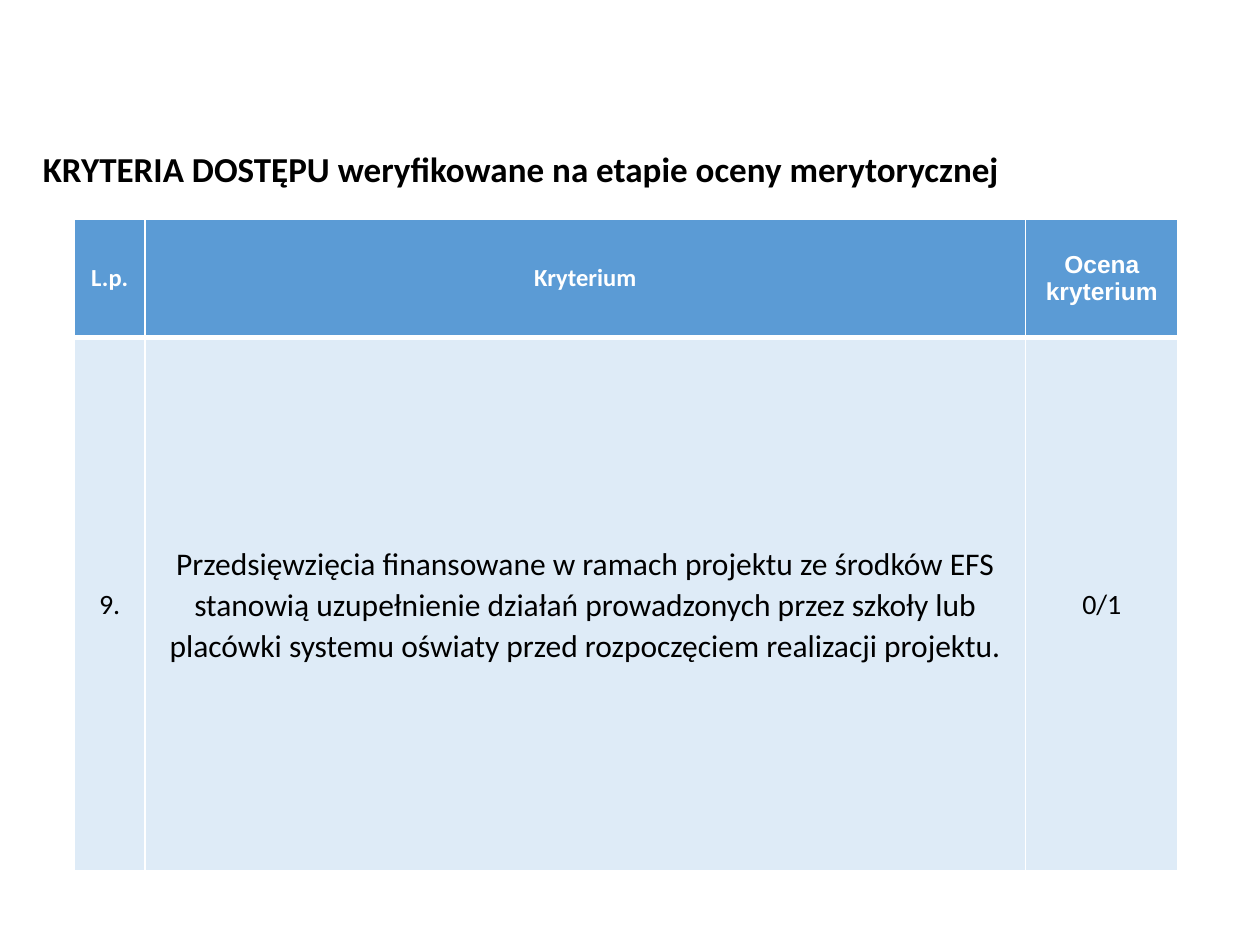
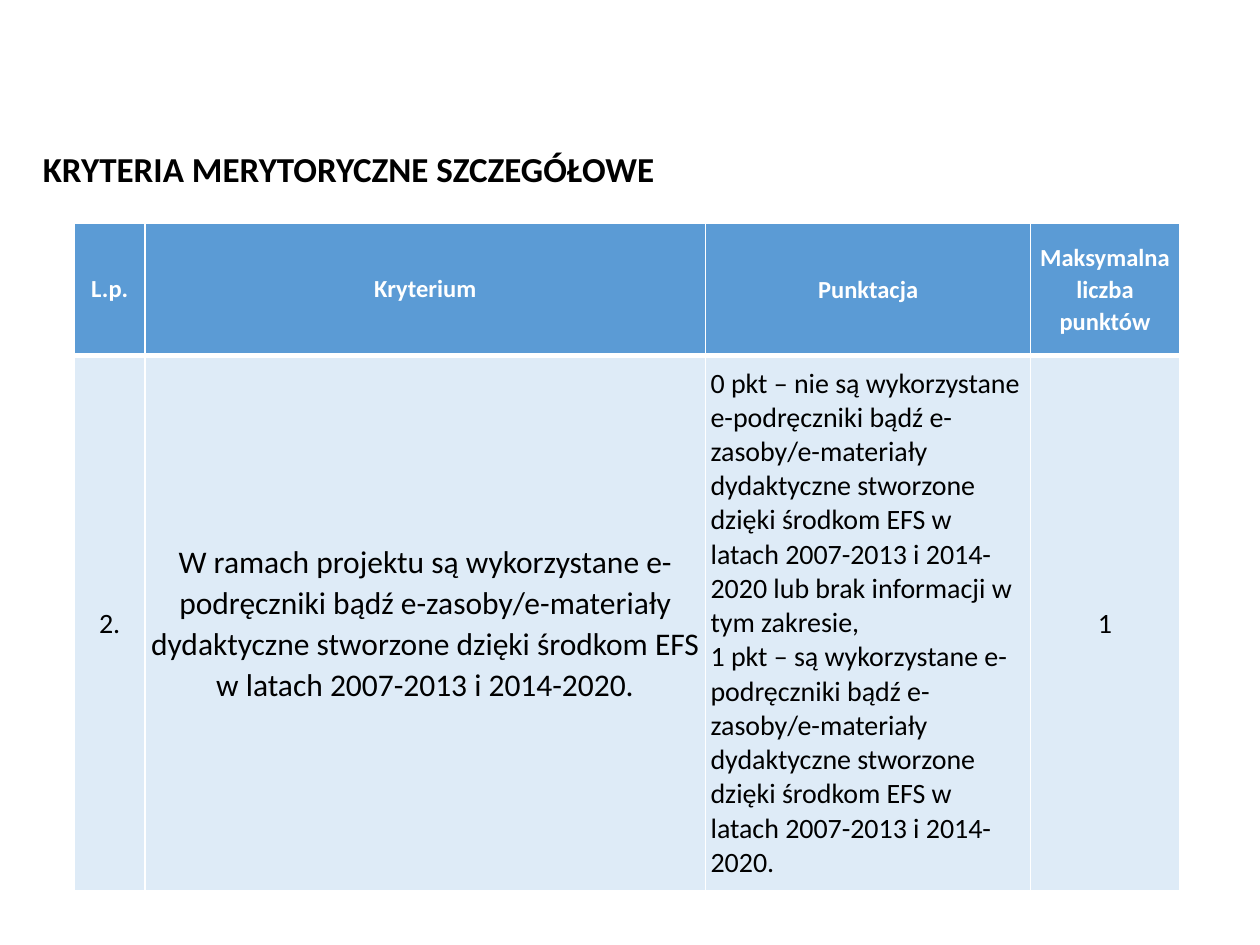
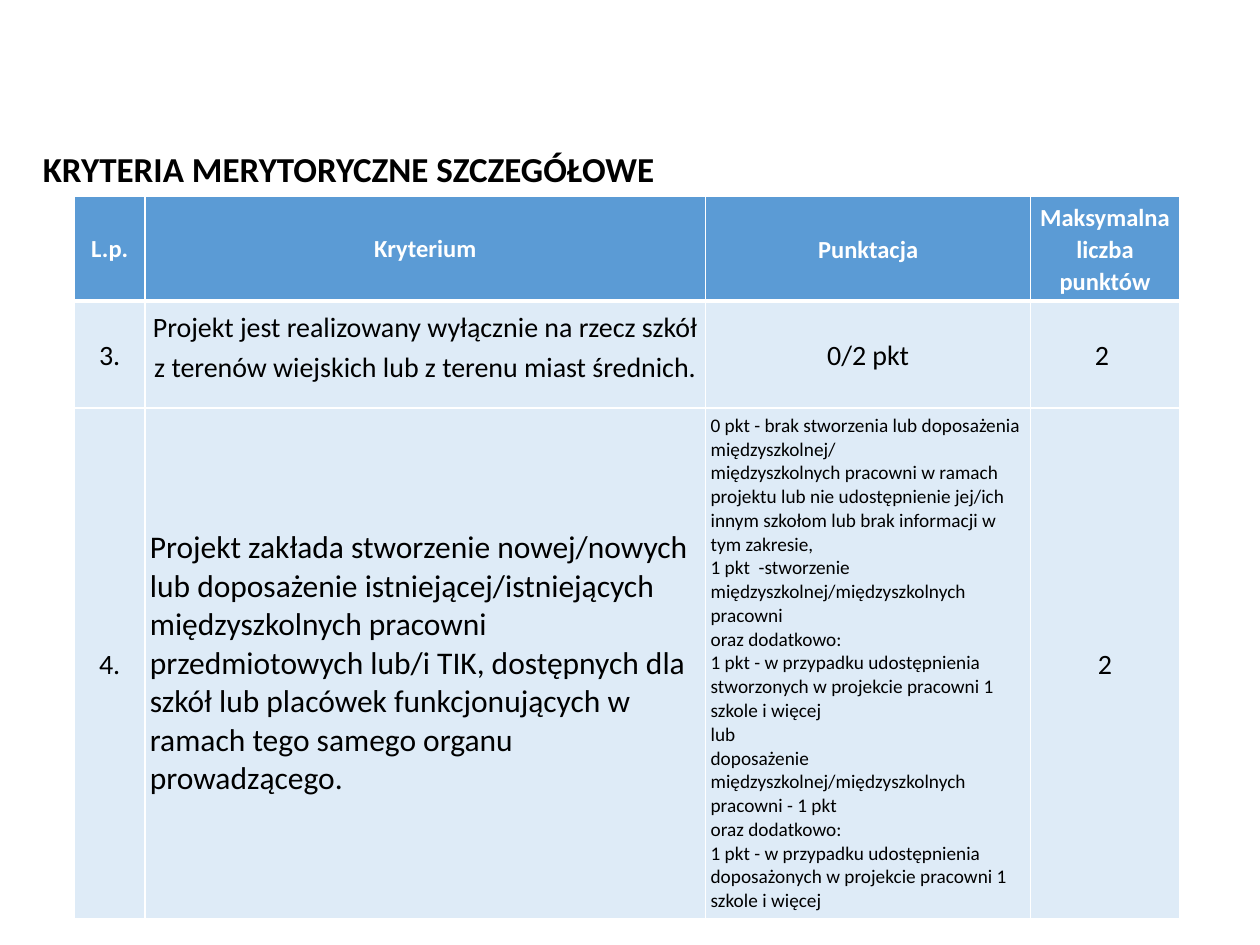
import pptx
import pptx.dml.color
import pptx.enum.text
import pptx.oxml
import pptx.oxml.ns
import pptx.util
from pptx.util import Inches

COLORS = {"header": "5B9BD5", "body": "DEEBF7", "border": "FFFFFF",
          "header_text": "FFFFFF", "text": "000000"}
ALIGN = pptx.enum.text.PP_ALIGN
ANCHOR = pptx.enum.text.MSO_ANCHOR
MARGINS = ("margin_left", "margin_top", "margin_right", "margin_bottom")

TIGHT = {"margin": 0.04}
SPACED = {**TIGHT, "spacing": 1.07}
LEFT = {**TIGHT, "align": ALIGN.LEFT}

TABLE_LEFT = 0.59
ACCESS_COLS = (0.56, 6.99, 1.21)
DETAIL_COLS = (0.56, 4.45, 2.58, 1.18)
DETAIL_TITLE = "KRYTERIA MERYTORYCZNE SZCZEGÓŁOWE"
DETAIL_HEADER = [
    ("L.p.", {}),
    ("Kryterium", {}),
    ("Punktacja", SPACED),
    ("Maksymalna liczba punktów", SPACED),
]


class Deck:
    header = {"size": 14, "bold": True, "color": "header_text", "fill": "header"}
    body = {"size": 16, "bold": False, "color": "text", "fill": "body"}
    base = {"name": "Calibri", "align": ALIGN.CENTER, "anchor": ANCHOR.MIDDLE,
            "margin": None, "spacing": None}

    def __init__(self):
        self.prs = pptx.Presentation()
        self.prs.slide_width = Inches(10)
        self.prs.slide_height = Inches(7.5)
        self.s = None

    def slide(self, title):
        self.s = self.prs.slides.add_slide(self.prs.slide_layouts[5])
        sp = self.s.shapes.title
        sp.left, sp.top, sp.width, sp.height = map(Inches, (0.24, 1.12, 9.11, 0.44))
        tf = sp.text_frame
        tf.word_wrap = True
        tf.auto_size = pptx.enum.text.MSO_AUTO_SIZE.SHAPE_TO_FIT_TEXT
        tf.vertical_anchor = ANCHOR.MIDDLE
        style = {**self.base, "size": 20, "bold": True, "color": "text",
                 "align": ALIGN.LEFT}
        self.text(tf, title, style)

    def text(self, tf, text, style):
        tf.text = text
        for p in tf.paragraphs:
            p.alignment = style["align"]
            if style["spacing"]:
                p.line_spacing = style["spacing"]
            for r in p.runs:
                values = {"name": style["name"], "bold": style["bold"],
                          "size": pptx.util.Pt(style["size"])}
                for key, value in values.items():
                    setattr(r.font, key, value)
                r.font.color.rgb = self.rgb(style["color"])

    def rgb(self, name):
        return pptx.dml.color.RGBColor.from_string(COLORS[name])

    def borders(self, cell, top, bottom):
        tc_pr = cell._tc.get_or_add_tcPr()
        for side, width in (("L", 1), ("R", 1), ("T", top), ("B", bottom)):
            tc_pr.append(pptx.oxml.parse_xml(
                f'<a:ln{side} {pptx.oxml.ns.nsdecls("a")} w="{pptx.util.Pt(width)}">'
                f'<a:solidFill><a:srgbClr val="{COLORS["border"]}"/></a:solidFill>'
                f'</a:ln{side}>'))

    def cell(self, cell, text, style, top, bottom):
        self.borders(cell, top, bottom)
        cell.fill.solid()
        cell.fill.fore_color.rgb = self.rgb(style["fill"])
        cell.vertical_anchor = style["anchor"]
        if style["margin"] is not None:
            for name in MARGINS:
                setattr(cell, name, Inches(style["margin"]))
        self.text(cell.text_frame, text, style)

    def table(self, top, cols, heights, rows):
        frame = self.s.shapes.add_table(
            len(rows), len(cols), Inches(TABLE_LEFT), Inches(top),
            Inches(sum(cols)), Inches(sum(heights)))
        table = frame.table
        table.horz_banding = False
        for column, width in zip(table.columns, cols):
            column.width = Inches(width)
        for i, (height, row) in enumerate(zip(heights, rows)):
            table.rows[i].height = Inches(height)
            kind = self.body if i else self.header
            for j, (text, extra) in enumerate(row):
                self.cell(table.cell(i, j), text, {**self.base, **kind, **extra},
                          top=3 if i == 1 else 1, bottom=1 if i else 3)


def main():
    deck = Deck()

    deck.slide("KRYTERIA DOSTĘPU weryfikowane na etapie oceny merytorycznej")
    deck.table(1.74, ACCESS_COLS, (0.94, 4.23), [
        [("L.p.", {}), ("Kryterium", {}), ("Ocena kryterium", {"name": "Arial"})],
        [("9.", {"spacing": 1.07}),
         ("Przedsięwzięcia finansowane w ramach projektu ze środków EFS stanowią "
          "uzupełnienie działań prowadzonych przez szkoły lub placówki systemu "
          "oświaty przed rozpoczęciem realizacji projektu.", {**SPACED, "size": 18}),
         ("0/1", SPACED)],
    ])

    deck.slide(DETAIL_TITLE)
    deck.table(1.77, DETAIL_COLS, (1.05, 4.25), [
        DETAIL_HEADER,
        [("2.", {"spacing": 1.07}),
         ("W ramach projektu są wykorzystane e-podręczniki bądź "
          "e-zasoby/e-materiały dydaktyczne stworzone dzięki środkom EFS "
          "w latach 2007-2013 i 2014-2020.", {**SPACED, "size": 18}),
         ("0 pkt – nie są wykorzystane e-podręczniki bądź e-zasoby/e-materiały "
          "dydaktyczne stworzone dzięki środkom EFS w latach 2007-2013 i 2014-2020 "
          "lub brak informacji w tym zakresie,\n"
          "1 pkt – są wykorzystane e-podręczniki bądź e-zasoby/e-materiały "
          "dydaktyczne stworzone dzięki środkom EFS w latach 2007-2013 "
          "i 2014-2020.", LEFT),
         ("1", SPACED)],
    ])

    deck.slide(DETAIL_TITLE)
    deck.table(1.56, DETAIL_COLS, (0.83, 0.85, 4.05), [
        DETAIL_HEADER,
        [("3.", {"spacing": 1.07}),
         ("Projekt jest realizowany wyłącznie na rzecz szkół z terenów wiejskich "
          "lub z terenu miast średnich.",
          {**TIGHT, "spacing": 1.15, "anchor": ANCHOR.TOP}),
         ("0/2 pkt", SPACED),
         ("2 ", SPACED)],
        [("4.", {"spacing": 1.07}),
         ("Projekt zakłada stworzenie nowej/nowych lub doposażenie "
          "istniejącej/istniejących międzyszkolnych pracowni przedmiotowych "
          "lub/i TIK, dostępnych dla szkół lub placówek funkcjonujących w ramach "
          "tego samego organu prowadzącego.", {**LEFT, "size": 18}),
         ("0 pkt - brak stworzenia lub doposażenia międzyszkolnej/\n"
          "międzyszkolnych pracowni w ramach projektu lub nie udostępnienie jej/ich "
          "innym szkołom lub brak informacji w tym zakresie,\n"
          "1 pkt  -stworzenie międzyszkolnej/międzyszkolnych pracowni\n"
          "oraz dodatkowo:\n"
          "1 pkt - w przypadku udostępnienia stworzonych w projekcie pracowni "
          "1 szkole i więcej\n"
          "lub\n"
          "doposażenie międzyszkolnej/międzyszkolnych pracowni - 1 pkt\n"
          "oraz dodatkowo:\n"
          "1 pkt - w przypadku udostępnienia doposażonych w projekcie pracowni "
          "1 szkole i więcej", {**LEFT, "size": 11}),
         ("2", SPACED)],
    ])

    deck.prs.save("out.pptx")


if __name__ == "__main__":
    main()
